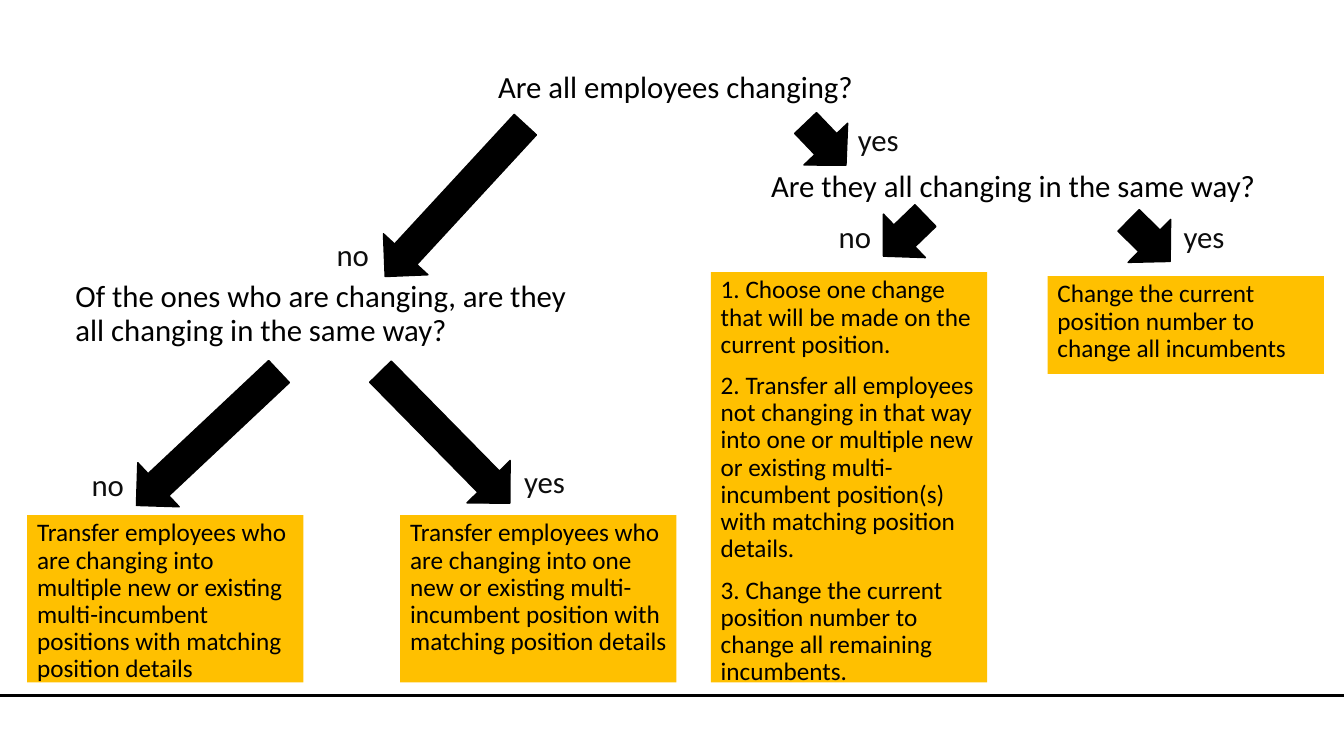
from dataclasses import dataclass

from lxml import etree
from pptx import Presentation
from pptx import util as u
from pptx.dml.color import RGBColor
from pptx.enum import shapes, text
from pptx.oxml import ns

PX = 9144
BLACK = RGBColor(0x00, 0x00, 0x00)
CHARCOAL = RGBColor(0x0D, 0x0D, 0x0D)
AMBER = RGBColor(0xFF, 0xC0, 0x00)
FONT = "Calibri"
PAGE_WIDTH, PAGE_HEIGHT = 1333, 750
OUTCOME_WIDTH = 274
ARROW_HEIGHT = 60


@dataclass(frozen=True)
class Question:
    left: int
    top: int
    width: int
    words: str
    align: text.PP_ALIGN = text.PP_ALIGN.LEFT


@dataclass(frozen=True)
class Answer:
    left: int
    top: int
    words: str


@dataclass(frozen=True)
class Outcome:
    left: int
    top: int
    height: int
    steps: tuple[str, ...]


@dataclass(frozen=True)
class Arrow:
    left: int
    top: int
    length: int
    angle: float


QUESTIONS = (
    Question(27, 66, 1286, "Are all employees changing?", text.PP_ALIGN.CENTER),
    Question(755, 165, 517, "Are they all changing in the same way?"),
    Question(65, 274, 517, "Of the ones who are changing, are they all changing in the same way?"),
)
ANSWERS = (
    Answer(324, 233, "no"),
    Answer(841, 119, "yes"),
    Answer(81, 461, "no"),
    Answer(510, 458, "yes"),
    Answer(822, 215, "no"),
    Answer(1164, 215, "yes"),
)
OUTCOMES = (
    Outcome(27, 511, 166, (
        "Transfer employees who are changing into multiple new or existing "
        "multi-incumbent positions with matching position details",
    )),
    Outcome(397, 511, 166, (
        "Transfer employees who are changing into one new or existing "
        "multi-incumbent position with matching position details",
    )),
    Outcome(705, 270, 407, (
        "1. Choose one change that will be made on the current position.",
        "2. Transfer all employees not changing in that way into one or multiple new "
        "or existing multi-incumbent position(s) with matching position details.",
        "3. Change the current position number to change all remaining incumbents.",
    )),
    Outcome(1039, 274, 97, (
        "Change the current position number to change all incumbents",
    )),
)
ARROWS = (
    Arrow(349, 169, 205, 132.7),
    Arrow(790, 113, 58, 46.3),
    Arrow(109, 405, 194, 136.8),
    Arrow(350, 404, 183, 45.5),
    Arrow(868, 204, 58, 136),
    Arrow(1111, 209, 58, 44.7),
)


def px(*lengths: int) -> list[u.Emu]:
    return [u.Emu(length * PX) for length in lengths]


def write(box, lines: tuple[str, ...], size: int, color: RGBColor,
          align: text.PP_ALIGN = text.PP_ALIGN.LEFT) -> None:
    frame = box.text_frame
    frame.text = "\n".join(lines)
    frame.word_wrap = True
    frame.vertical_anchor = text.MSO_ANCHOR.TOP
    for index, para in enumerate(frame.paragraphs):
        para.alignment = align
        para.line_spacing = 0.9
        para.space_before = u.Pt(10 if index else 0)
        for span in para.runs:
            span.font.name = FONT
            span.font.size = u.Pt(size)
            span.font.color.rgb = color


def draw_baseline(page) -> None:
    line = page.shapes.add_connector(
        shapes.MSO_CONNECTOR.STRAIGHT, *px(0, 690, PAGE_WIDTH, 690))
    line.line.color.rgb = BLACK
    line.line.width = u.Pt(2)
    etree.SubElement(line._element.spPr, ns.qn("a:effectLst"))


def draw_question(page, question: Question) -> None:
    box = page.shapes.add_textbox(*px(question.left, question.top, question.width, 45))
    write(box, (question.words,), 22, BLACK, question.align)


def draw_answer(page, answer: Answer) -> None:
    box = page.shapes.add_textbox(*px(answer.left, answer.top, 67, 47))
    write(box, (answer.words,), 22, CHARCOAL)


def draw_outcome(page, outcome: Outcome) -> None:
    box = page.shapes.add_shape(
        shapes.MSO_SHAPE.RECTANGLE,
        *px(outcome.left, outcome.top, OUTCOME_WIDTH, outcome.height))
    box.shadow.inherit = False
    box.fill.solid()
    box.fill.fore_color.rgb = AMBER
    box.line.fill.background()
    write(box, outcome.steps, 18, BLACK)


def draw_arrow(page, arrow: Arrow) -> None:
    shape = page.shapes.add_shape(
        shapes.MSO_SHAPE.RIGHT_ARROW,
        *px(arrow.left, arrow.top, arrow.length, ARROW_HEIGHT))
    shape.rotation = arrow.angle
    shape.shadow.inherit = False
    shape.fill.solid()
    shape.fill.fore_color.rgb = BLACK
    shape.line.color.rgb = BLACK
    shape.line.width = u.Pt(1)


def main() -> None:
    deck = Presentation()
    deck.slide_width, deck.slide_height = px(PAGE_WIDTH, PAGE_HEIGHT)
    page = deck.slides.add_slide(deck.slide_layouts[6])
    draw_baseline(page)
    for question in QUESTIONS:
        draw_question(page, question)
    for outcome in OUTCOMES:
        draw_outcome(page, outcome)
    for arrow in ARROWS:
        draw_arrow(page, arrow)
    for answer in ANSWERS:
        draw_answer(page, answer)
    deck.save("out.pptx")


if __name__ == "__main__":
    main()
